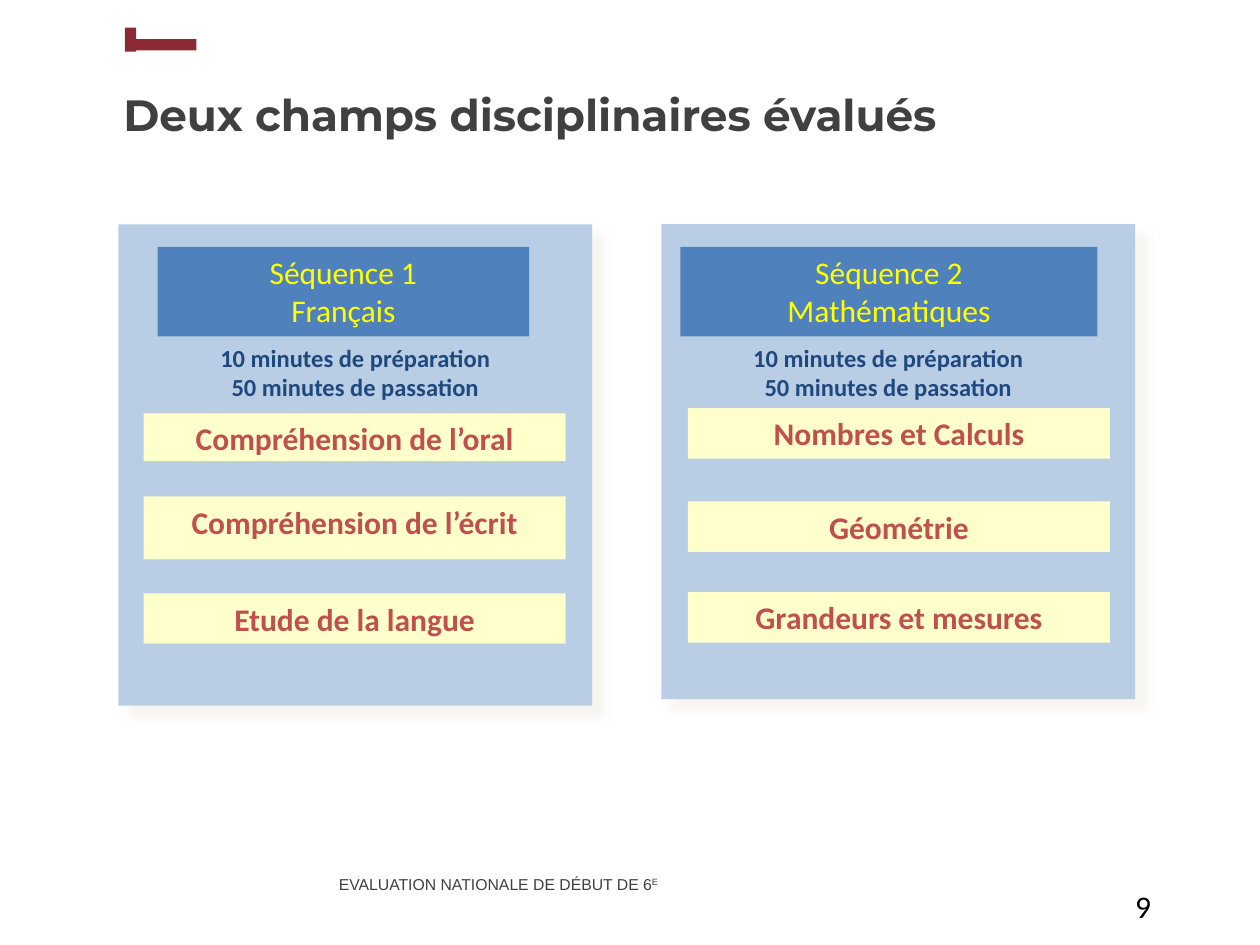
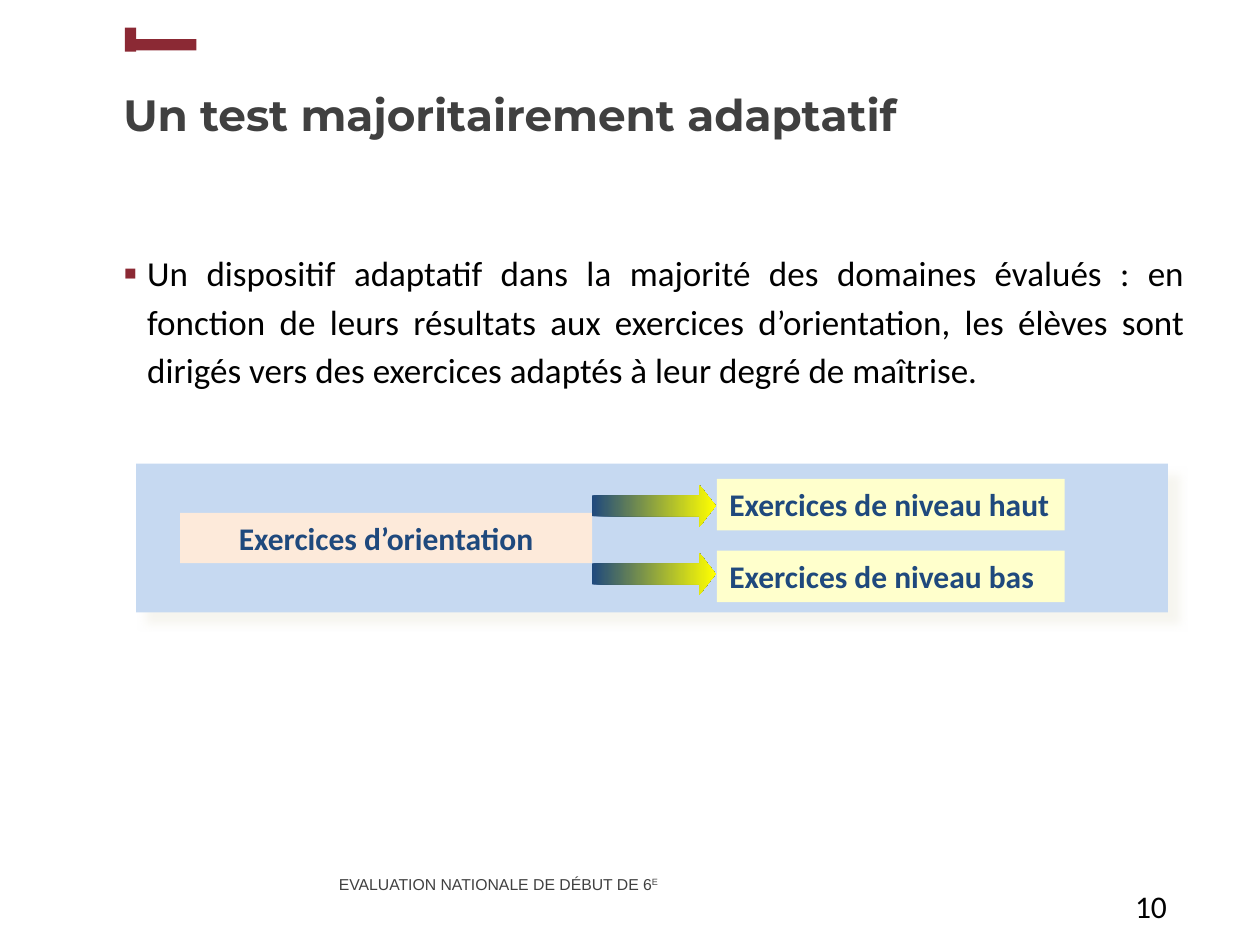
from dataclasses import dataclass

from lxml.etree import SubElement
from pptx import Presentation
from pptx.dml.color import RGBColor
from pptx.enum.shapes import MSO_SHAPE as Shape
from pptx.enum.text import MSO_ANCHOR as Anchor, PP_ALIGN as Align
from pptx.oxml.ns import qn
from pptx.util import Inches, Pt


@dataclass(frozen=True)
class Theme:
    body_font: str = "Calibri"
    title_font: str = "Montserrat"
    footer_font: str = "Arial"
    black: str = "000000"
    grey: str = "404040"
    crimson: str = "8B2934"
    panel: str = "B9CDE5"
    pale_panel: str = "C6D9F1"
    header: str = "4F81BD"
    yellow: str = "FFFF00"
    cream: str = "FFFFCC"
    peach: str = "FDEADA"
    brick: str = "C0504D"
    navy: str = "1F497D"
    shade: str = "EEECE1"
    title_size: float = 25
    lead_size: float = 20
    label_size: float = 18
    timing_size: float = 14
    footer_size: float = 9


THEME = Theme()


def write(frame, *lines, size=THEME.label_size, color=THEME.black, font=THEME.body_font,
          bold=False, align=Align.LEFT, anchor=Anchor.TOP, spacing=None, superscript=None):
    frame.word_wrap = True
    frame.vertical_anchor = anchor
    for number, line in enumerate(lines):
        paragraph = frame.add_paragraph() if number else frame.paragraphs[0]
        paragraph.alignment = align
        if spacing:
            paragraph.line_spacing = spacing
        for words in filter(None, (line, superscript)):
            run = paragraph.add_run()
            run.text = words
            run.font.size = Pt(size)
            run.font.name = font
            run.font.bold = bold
            run.font.color.rgb = RGBColor.from_string(color)
            if words == superscript:
                run.font._element.set("baseline", "30000")
    return frame


class Deck:
    def __init__(self, theme):
        self.theme = theme
        self.prs = Presentation()
        self.prs.slide_width, self.prs.slide_height = Inches(10), Inches(7.5)
        self.slide = None

    def start_slide(self, title, page):
        t = self.theme
        self.slide = self.prs.slides.add_slide(self.prs.slide_layouts[6])
        self.text((2.59, 6.72, 3.88, 0.56), "EVALUATION NATIONALE DE DÉBUT DE 6",
                  superscript="E", size=t.footer_size, font=t.footer_font, color=t.grey,
                  anchor=Anchor.MIDDLE, spacing=Pt(13.2))
        self.text((0.88, 0.2, 8.62, 1.41), title, size=t.title_size, font=t.title_font,
                  color=t.grey, bold=True, anchor=Anchor.MIDDLE)
        self.text((8.91, 6.99, 0.49, 0.4), str(page))
        self.box((0.99, 0.22, 0.09, 0.19), t.crimson)
        self.box((1.03, 0.31, 0.53, 0.09), t.crimson)

    def text(self, place, *lines, **style):
        area = self.slide.shapes.add_textbox(*map(Inches, place))
        return write(area.text_frame, *lines, **style)

    def outline(self, kind, place):
        shape = self.slide.shapes.add_shape(kind, *map(Inches, place))
        shape.shadow.inherit = False
        shape.line.fill.background()
        return shape

    def box(self, place, fill, *lines, **style):
        shape = self.outline(Shape.RECTANGLE, place)
        shape.fill.solid()
        shape.fill.fore_color.rgb = RGBColor.from_string(fill)
        if lines:
            write(shape.text_frame, *lines, **style)
        return shape

    def panel(self, place, fill):
        effects = self.box(place, fill)._element.spPr.find(qn("a:effectLst"))
        shadow = SubElement(effects, qn("a:outerShdw"), blurRad=str(Pt(5)),
                            dist=str(Pt(8.5)), dir="2700000", algn="tl", rotWithShape="0")
        tint = SubElement(shadow, qn("a:srgbClr"), val=self.theme.shade)
        SubElement(tint, qn("a:alpha"), val="50000")

    def arrow(self, place):
        arrow = self.outline(Shape.RIGHT_ARROW, place)
        arrow.adjustments[0], arrow.adjustments[1] = 0.5, 0.39
        arrow.fill.gradient()
        arrow.fill.gradient_angle = 0
        ends = (0, self.theme.navy), (1, self.theme.yellow)
        for stop, (position, color) in zip(arrow.fill.gradient_stops, ends):
            stop.position = position
            stop.color.rgb = RGBColor.from_string(color)

    def bullet(self, place, sentence, **style):
        paragraph = self.text(place, sentence, **style).paragraphs[0]
        paragraph.space_after = Pt(10)
        props = paragraph._p.get_or_add_pPr()
        props.set("marL", str(Inches(0.19)))
        props.set("indent", str(Inches(-0.19)))
        tint = SubElement(props, qn("a:buClr"))
        SubElement(tint, qn("a:srgbClr"), val=self.theme.crimson)
        SubElement(props, qn("a:buSzPct"), val="114000")
        SubElement(props, qn("a:buFont"), typeface=self.theme.footer_font)
        SubElement(props, qn("a:buChar"), char="▪")

    def sequence(self, left, height, header, timing_left, topic_left, heading, topics):
        t = self.theme
        header_left, header_width = header
        self.panel((left, 1.78, 3.76, height), t.panel)
        self.box((header_left, 1.96, header_width, 0.71), t.header, *heading,
                 color=t.yellow, align=Align.CENTER)
        self.text((timing_left, 2.67, 2.68, 0.57), "10 minutes de préparation",
                  "50 minutes de passation", size=t.timing_size, color=t.navy,
                  bold=True, align=Align.CENTER)
        for topic, top, topic_height in topics:
            self.box((topic_left, top, 3.35, topic_height), t.cream, topic,
                     color=t.brick, bold=True, align=Align.CENTER)


def main():
    deck = Deck(THEME)

    deck.start_slide("Deux champs disciplinaires évalués", 9)
    deck.sequence(0.94, 3.82, (1.25, 2.95), 1.48, 1.14, ("Séquence 1", "Français"),
                  [("Compréhension de l’oral", 3.28, 0.38),
                   ("Compréhension de l’écrit", 3.94, 0.5),
                   ("Etude de la langue", 4.71, 0.4)])
    deck.sequence(5.25, 3.77, (5.4, 3.31), 5.71, 5.46, ("Séquence 2", "Mathématiques"),
                  [("Nombres et Calculs", 3.24, 0.4),
                   ("Géométrie", 3.98, 0.4),
                   ("Grandeurs et mesures", 4.7, 0.4)])

    deck.start_slide("Un test majoritairement adaptatif", 10)
    deck.bullet((0.88, 1.9, 8.62, 1.5),
                "Un dispositif adaptatif dans la majorité des domaines évalués : en fonction "
                "de leurs résultats aux exercices d’orientation, les élèves sont dirigés vers "
                "des exercices adaptés à leur degré de maîtrise.",
                size=THEME.lead_size, align=Align.JUSTIFY, spacing=1.15)
    deck.panel((1.08, 3.68, 8.19, 1.18), THEME.pale_panel)
    deck.box((1.43, 4.07, 3.27, 0.4), THEME.peach, "Exercices d’orientation",
             color=THEME.navy, bold=True, align=Align.CENTER)
    for level, level_top, arrow_top in (("haut", 3.8, 3.85), ("bas", 4.37, 4.39)):
        deck.box((5.69, level_top, 2.76, 0.41), THEME.cream, f"Exercices de niveau {level}",
                 color=THEME.navy, bold=True)
        deck.arrow((4.7, arrow_top, 0.98, 0.33))

    deck.prs.save("out.pptx")


if __name__ == "__main__":
    main()
